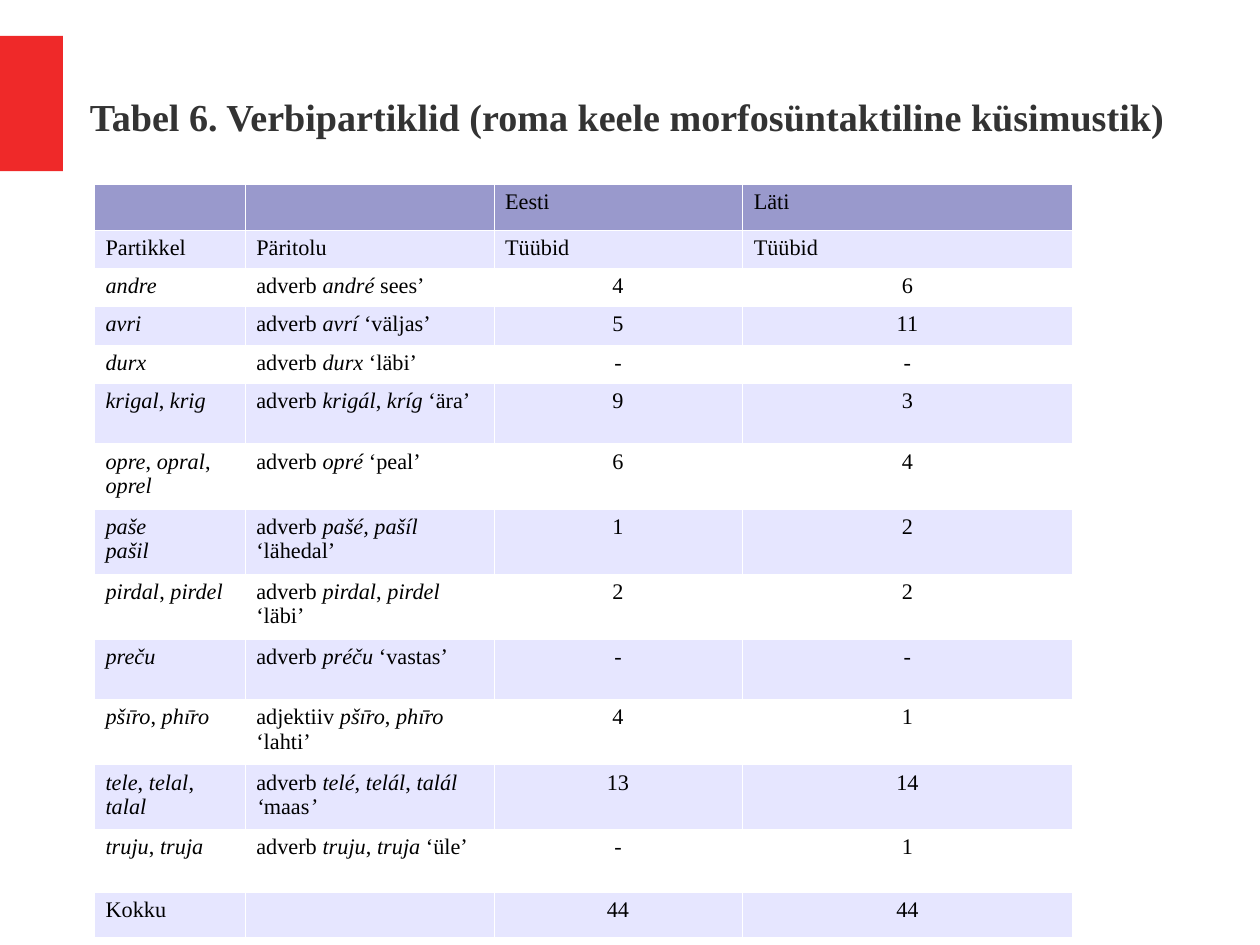
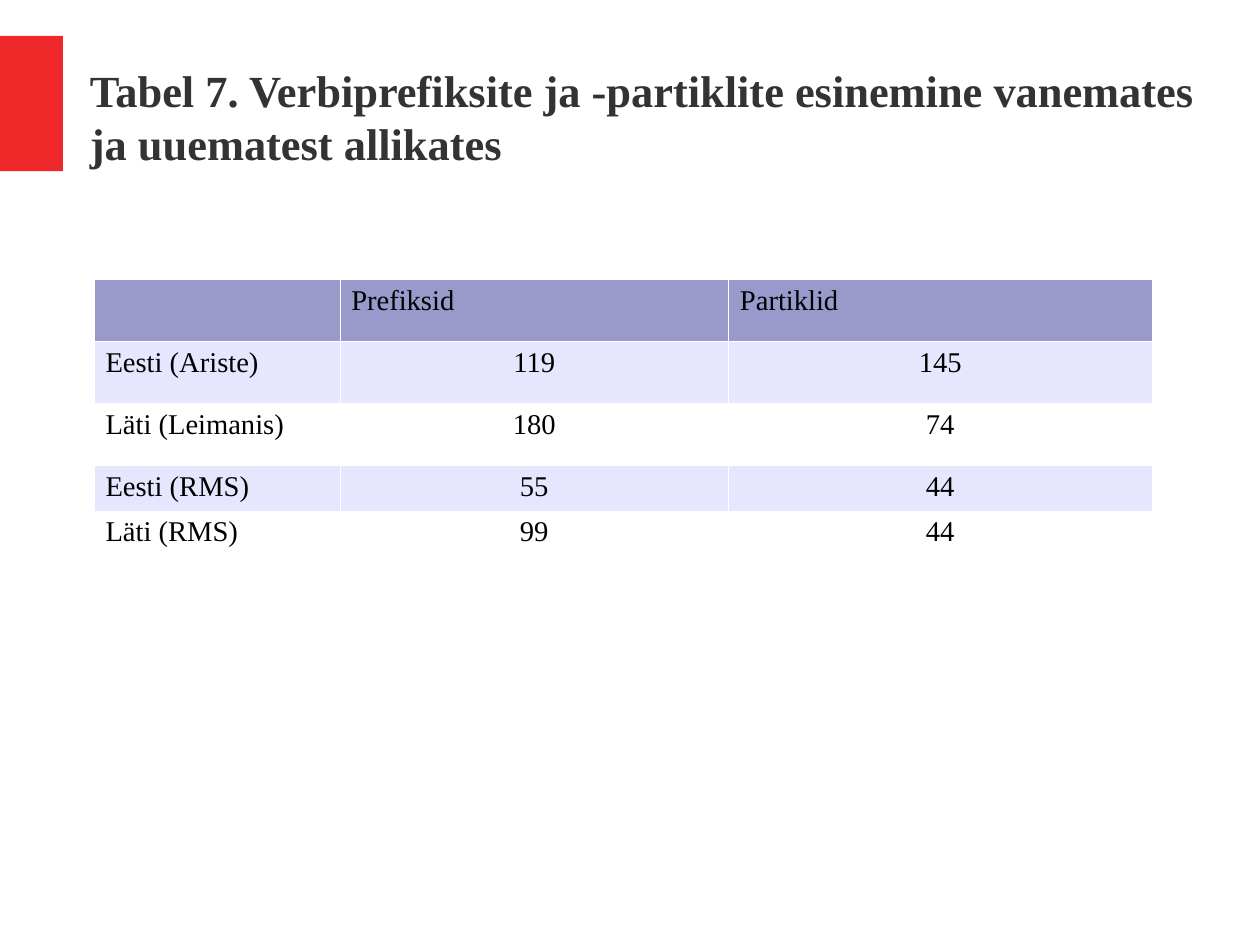
from dataclasses import dataclass

from lxml.etree import SubElement
from pptx import Presentation
from pptx.dml.color import RGBColor
from pptx.enum.shapes import MSO_SHAPE
from pptx.enum.text import MSO_ANCHOR, PP_ALIGN
from pptx.oxml.ns import qn
from pptx.util import Cm, Inches, Pt


@dataclass(frozen=True)
class Theme:
    font: str = "Times New Roman"
    accent: str = "EF2929"
    title: str = "333333"
    text: str = "000000"
    header: str = "9999CC"
    stripe: str = "E6E6FF"
    paper: str = "FFFFFF"
    border_width: float = 0.06
    title_large: int = 28
    title_small: int = 24
    table_large: int = 18
    table_small: int = 14


THEME = Theme()


def write_text(frame, text, *, size, color, bold=False, align=PP_ALIGN.LEFT):
    """Fill a text frame; each line is a paragraph, *stars* mark italics."""
    for index, line in enumerate(text.split("\n")):
        paragraph = frame.add_paragraph() if index else frame.paragraphs[0]
        paragraph.alignment = align
        for part, content in enumerate(line.split("*")):
            if not content:
                continue
            run = paragraph.add_run()
            run.text = content
            run.font.name = THEME.font
            run.font.size = Pt(size)
            run.font.bold = bold
            run.font.italic = part % 2 == 1
            run.font.color.rgb = RGBColor.from_string(color)


class Deck:
    """Holds the presentation and current slide; lengths are percent of the slide."""

    def __init__(self, width, height):
        self.presentation = Presentation()
        self.presentation.slide_width = width
        self.presentation.slide_height = height
        self.slide = None

    def across(self, share):
        return round(self.presentation.slide_width * share / 100)

    def down(self, share):
        return round(self.presentation.slide_height * share / 100)

    def box(self, left, top, width, height):
        return self.across(left), self.down(top), self.across(width), self.down(height)

    def add_slide(self, title, title_size):
        layout = self.presentation.slide_layouts[6]
        self.slide = self.presentation.slides.add_slide(layout)
        self.add_band()
        self.add_title(title, title_size)

    def add_band(self):
        shape = self.slide.shapes.add_shape(
            MSO_SHAPE.RECTANGLE, *self.box(0, 3.8, 5, 14.3))
        shape.shadow.inherit = False
        shape.fill.solid()
        shape.fill.fore_color.rgb = RGBColor.from_string(THEME.accent)
        shape.line.fill.background()

    def add_title(self, text, size):
        frame = self.slide.shapes.add_textbox(
            *self.box(7.14, 3.96, 87.9, 16.7)).text_frame
        frame.word_wrap = True
        frame.vertical_anchor = MSO_ANCHOR.MIDDLE
        frame.margin_left = frame.margin_right = 0
        frame.margin_top = frame.margin_bottom = 0
        write_text(frame, text, size=size, color=THEME.title, bold=True)

    def add_table(self, records, *, top, columns, rows, size):
        table = self.slide.shapes.add_table(
            len(rows), len(columns),
            *self.box(7.47, top, sum(columns), sum(rows))).table
        table.first_row = table.horz_banding = False
        for column, share in zip(table.columns, columns):
            column.width = self.across(share)
        for row, share in zip(table.rows, rows):
            row.height = self.down(share)
        for row_index, record in enumerate(records):
            # Header first, then alternating stripes
            fill = THEME.stripe if row_index % 2 else THEME.paper
            if row_index == 0:
                fill = THEME.header
            for column_index, text in enumerate(record):
                self.fill_cell(table.cell(row_index, column_index), text, fill, size)

    def fill_cell(self, cell, text, fill, size):
        cell.margin_left = cell.margin_right = Inches(0.1)
        cell.margin_top = cell.margin_bottom = Inches(0.05)
        numeric = text.isdigit() or text == "-"
        write_text(cell.text_frame, text, size=size, color=THEME.text,
                   align=PP_ALIGN.CENTER if numeric else PP_ALIGN.LEFT)
        # Borders come before the fill in the cell properties
        properties = cell._tc.get_or_add_tcPr()
        for side in ("a:lnL", "a:lnR", "a:lnT", "a:lnB"):
            line = SubElement(properties, qn(side), w=str(int(Pt(THEME.border_width))))
            solid = SubElement(line, qn("a:solidFill"))
            SubElement(solid, qn("a:srgbClr"), val=THEME.paper)
        cell.fill.solid()
        cell.fill.fore_color.rgb = RGBColor.from_string(fill)


PARTICLES = [
    ("", "", "Eesti", "Läti"),
    ("Partikkel", "Päritolu", "Tüübid", "Tüübid"),
    ("*andre*", "adverb *andré* sees’", "4", "6"),
    ("*avri*", "adverb *avrí* ‘väljas’", "5", "11"),
    ("*durx*", "adverb *durx* ‘läbi’", "-", "-"),
    ("*krigal*, *krig*", "adverb *krigál*, *kríg* ‘ära’", "9", "3"),
    ("*opre*, *opral*, *oprel*", "adverb *opré* ‘peal’", "6", "4"),
    ("*paše*\n*pašil*", "adverb *pašé, pašíl *‘lähedal’", "1", "2"),
    ("*pirdal*, *pirdel*", "adverb *pirdal*, *pirdel* ‘läbi’", "2", "2"),
    ("*preču*", "adverb *préču *‘vastas’", "-", "-"),
    ("*pšı̄ro*, *phı̄ro*", "adjektiiv *pšı̄ro*, *phı̄ro* ‘lahti’", "4", "1"),
    ("*tele*, *telal*, *talal*", "adverb *telé*, *telál*, *talál ‘*maas*’*", "13", "14"),
    ("*truju*, *truja*", "adverb *truju*, *truja* ‘üle’", "-", "1"),
    ("Kokku", "", "44", "44"),
]

SOURCES = [
    ("", "Prefiksid", "Partiklid"),
    ("Eesti (Ariste)", "119", "145"),
    ("Läti (Leimanis)", "180", "74"),
    ("Eesti (RMS)", "55", "44"),
    ("Läti (RMS)", "99", "44"),
]


def main():
    deck = Deck(Cm(28), Cm(21))

    # Verb particles
    deck.add_slide("Tabel 6. Verbipartiklid (roma keele morfosüntaktiline küsimustik)",
                   THEME.title_small)
    deck.add_table(PARTICLES, top=19.48, size=THEME.table_small,
                   columns=[11.97, 19.74, 19.74, 26.2],
                   rows=[4.85, 3.97] + [4.06] * 3
                   + [6.4, 6.9, 6.85, 6.9, 6.4, 6.9, 6.85, 6.6, 4.65])

    # Prefixes and particles by source
    deck.add_slide("Tabel 7. Verbiprefiksite ja -partiklite esinemine "
                   "vanemates ja uuematest allikates", THEME.title_large)
    deck.add_table(SOURCES, top=29.55, size=THEME.table_large,
                   columns=[19.5, 30.85, 33.6], rows=[6.55] * 3 + [4.85] * 2)

    deck.presentation.save("out.pptx")


if __name__ == "__main__":
    main()
